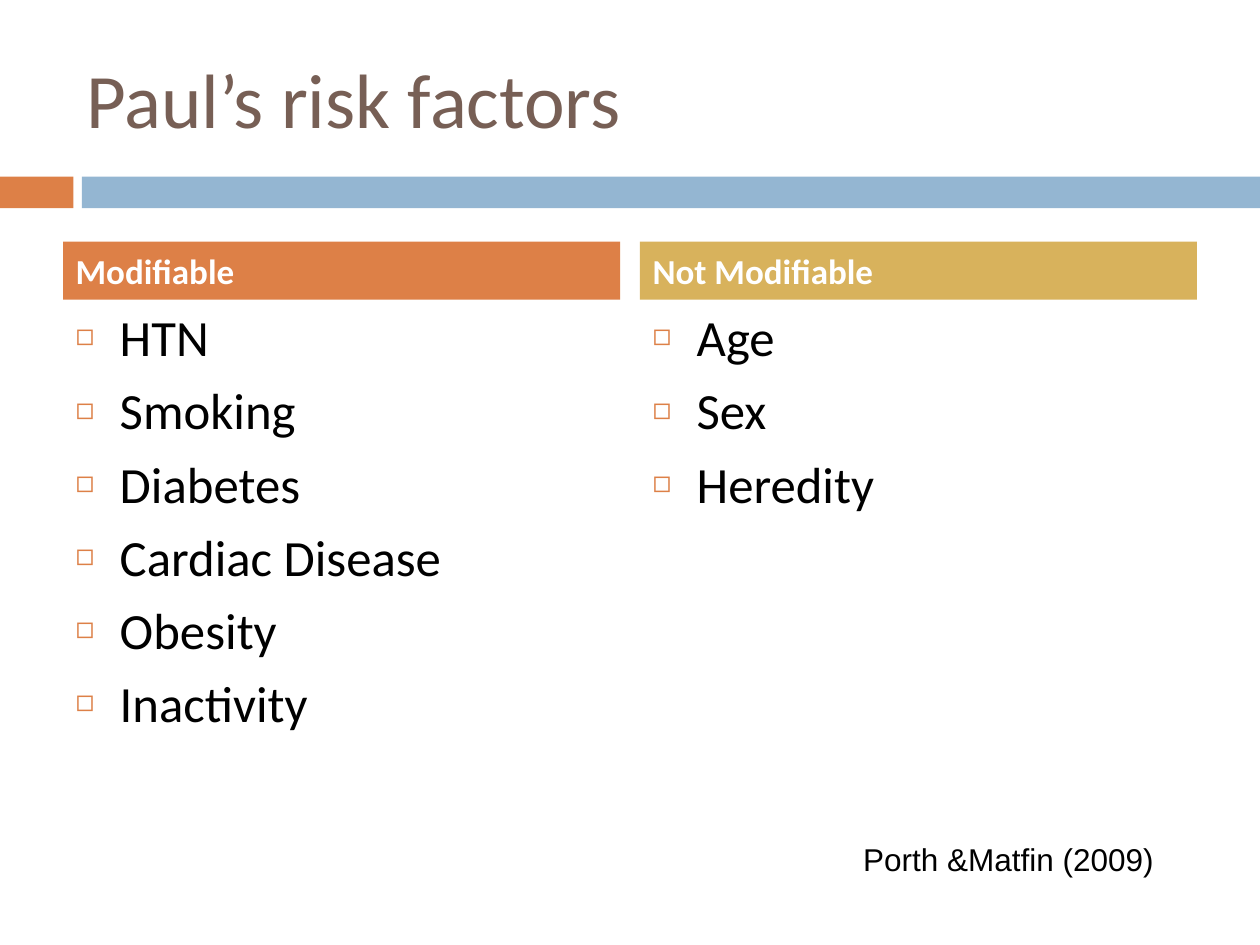
from dataclasses import dataclass

from lxml.etree import SubElement
from pptx import Presentation
from pptx.dml.color import RGBColor
from pptx.enum.shapes import MSO_SHAPE as Preset
from pptx.enum.text import MSO_ANCHOR as Anchor, MSO_AUTO_SIZE as AutoSize, PP_ALIGN as Align
from pptx.oxml.ns import qn
from pptx.util import Cm, Pt

ORANGE = RGBColor(0xDD, 0x80, 0x47)
BLUE = RGBColor(0x94, 0xB6, 0xD2)
GOLD = RGBColor(0xD8, 0xB2, 0x5C)
BROWN = RGBColor(0x77, 0x5F, 0x55)
WHITE = RGBColor(0xFF, 0xFF, 0xFF)
BLACK = RGBColor(0, 0, 0)

SLIDE_WIDTH, SLIDE_HEIGHT = 25.4, 19.05
COLUMN_LEFT, COLUMN_WIDTH, COLUMN_PITCH = 1.27, 11.23, 11.63
HEADING_TOP, HEADING_HEIGHT, LIST_HEIGHT = 4.87, 1.17, 7.29
BAND_TOP, BAND_HEIGHT = 3.56, 0.64


@dataclass(frozen=True)
class Band:
    left: float
    right: float
    color: RGBColor


@dataclass(frozen=True)
class RiskGroup:
    heading: str
    color: RGBColor
    factors: tuple[str, ...]


BANDS = (Band(0, 1.48, ORANGE), Band(1.65, SLIDE_WIDTH, BLUE))
RISK_GROUPS = (
    RiskGroup("Modifiable", ORANGE,
              ("HTN", "Smoking", "Diabetes", "Cardiac Disease", "Obesity", "Inactivity")),
    RiskGroup("Not Modifiable", GOLD, ("Age", "Sex", "Heredity")),
)


def place(shape, left: float, top: float, width: float, height: float) -> None:
    shape.left, shape.top = Cm(left), Cm(top)
    shape.width, shape.height = Cm(width), Cm(height)


def add_bullet(paragraph) -> None:
    properties = paragraph._p.get_or_add_pPr()
    properties.set("marL", str(Cm(0.89)))
    properties.set("indent", str(-Cm(0.89)))
    bullet_color = SubElement(properties, qn("a:buClr"))
    SubElement(bullet_color, qn("a:srgbClr"), val=str(ORANGE))
    SubElement(properties, qn("a:buSzPct"), val="60000")
    SubElement(properties, qn("a:buChar"), char="◻")


def write(shape, *lines: str, size: float, color: RGBColor, font: str = "Calibri",
          bold: bool = False, anchor=Anchor.TOP, before: float = 0,
          bulleted: bool = False) -> None:
    frame = shape.text_frame
    frame.word_wrap = True
    frame.auto_size = AutoSize.NONE
    frame.vertical_anchor = anchor
    frame.text = "\n".join(lines)
    for paragraph in frame.paragraphs:
        paragraph.alignment = Align.LEFT
        paragraph.space_before = Pt(before)
        if bulleted:
            add_bullet(paragraph)
        for run in paragraph.runs:
            run.font.name, run.font.size = font, Pt(size)
            run.font.bold = bold
            run.font.color.rgb = color


def draw_band(slide, band: Band) -> None:
    bar = slide.shapes.add_shape(Preset.RECTANGLE, Cm(band.left), Cm(BAND_TOP),
                                 Cm(band.right - band.left), Cm(BAND_HEIGHT))
    bar.shadow.inherit = False
    bar.fill.solid()
    bar.fill.fore_color.rgb = band.color
    bar.line.fill.background()


def draw_group(slide, column: int, group: RiskGroup) -> None:
    heading = slide.placeholders[1 + 2 * column]
    factors = slide.placeholders[2 + 2 * column]
    left = COLUMN_LEFT + column * COLUMN_PITCH
    place(heading, left, HEADING_TOP, COLUMN_WIDTH, HEADING_HEIGHT)
    heading.fill.solid()
    heading.fill.fore_color.rgb = group.color
    write(heading, group.heading, size=20, color=WHITE, bold=True,
          anchor=Anchor.MIDDLE, before=7)
    place(factors, left, HEADING_TOP + HEADING_HEIGHT, COLUMN_WIDTH, LIST_HEIGHT)
    write(factors, *group.factors, size=29, color=BLACK, before=7, bulleted=True)


def main() -> None:
    deck = Presentation()
    deck.slide_width, deck.slide_height = Cm(SLIDE_WIDTH), Cm(SLIDE_HEIGHT)
    comparison_layout = deck.slide_layouts[4]
    slide = deck.slides.add_slide(comparison_layout)

    for band in BANDS:
        draw_band(slide, band)

    title = slide.shapes.title
    place(title, 1.48, 0.76, 22.65, 2.41)
    write(title, "Paul’s risk factors", size=44, color=BROWN, anchor=Anchor.MIDDLE)

    for column, group in enumerate(RISK_GROUPS):
        draw_group(slide, column, group)

    citation = slide.shapes.add_textbox(Cm(17.15), Cm(16.8), Cm(7.82), Cm(1.84))
    write(citation, "Porth &Matfin (2009)", size=18, color=BLACK, font="Arial")

    deck.save("out.pptx")


if __name__ == "__main__":
    main()
